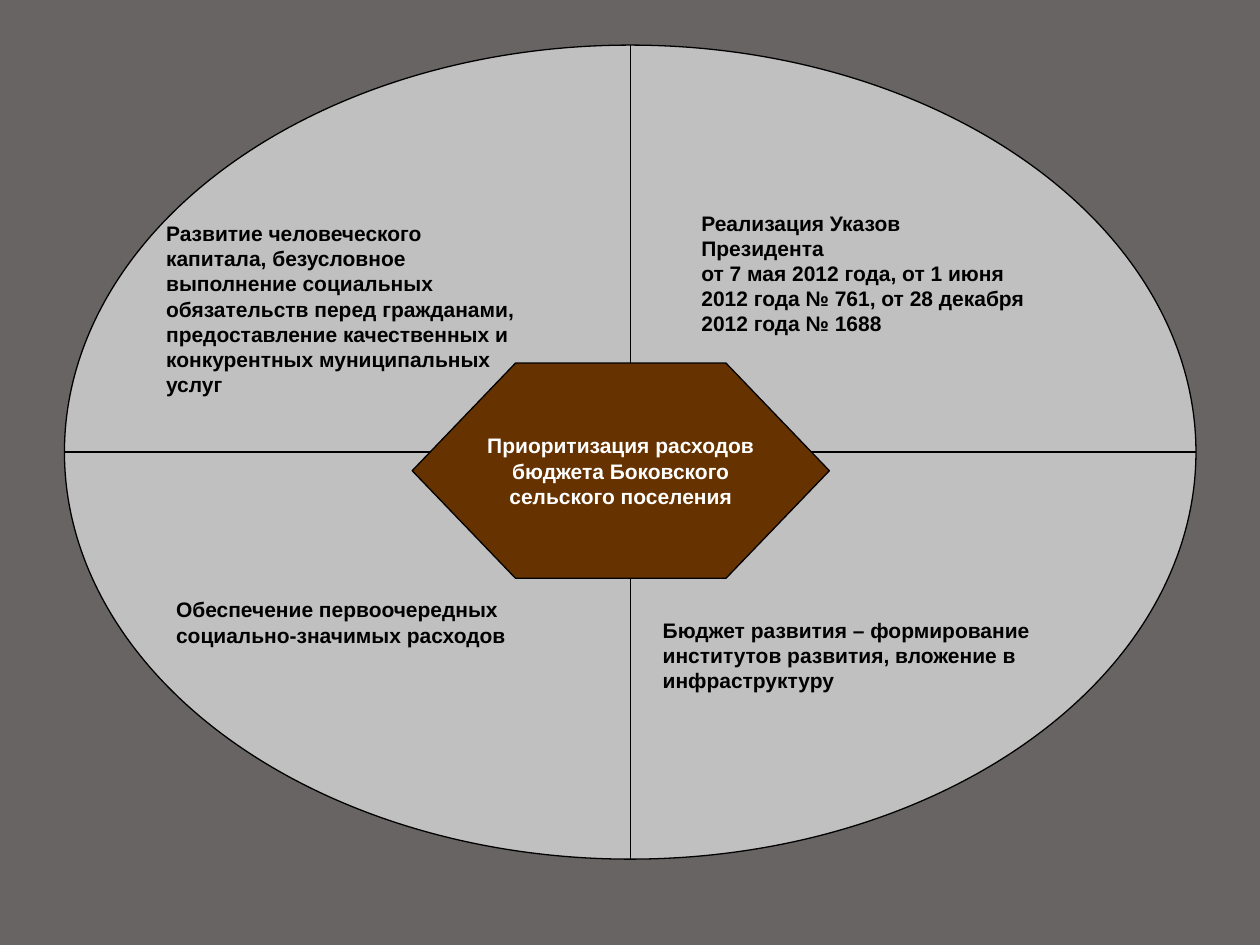
"""Build a slide of budget spending priorities in a four-part ellipse."""
from pptx import Presentation
from pptx.dml.color import RGBColor
from pptx.enum.shapes import MSO_SHAPE
from pptx.enum.text import MSO_ANCHOR, MSO_AUTO_SIZE, PP_ALIGN
from pptx.util import Cm, Pt

WHEEL, HEX = MSO_SHAPE.FLOWCHART_OR, MSO_SHAPE.HEXAGON
MIDDLE, CENTER, LEFT = MSO_ANCHOR.MIDDLE, PP_ALIGN.CENTER, PP_ALIGN.LEFT
GROW = MSO_AUTO_SIZE.SHAPE_TO_FIT_TEXT

BACK, GREY, BROWN = "696464", "C0C0C0", "663300"
BLACK, WHITE = "000000", "FFFFFF"
FONT = {"name": "Arial", "size": Pt(12), "bold": True}

WHEEL_BOX = (1.3, 0.91, 22.81, 16.41)
CORE_BOX = (8.31, 7.32, 8.41, 4.34)
CORE = ["Приоритизация расходов", "бюджета Боковского", "сельского поселения"]
PARTS = [
    ((3.1, 4.32, 8.41, 4.83), [
        "Развитие человеческого",
        "капитала, безусловное",
        "выполнение социальных",
        "обязательств перед гражданами,",
        "предоставление качественных и конкурентных муниципальных",
        "услуг"]),
    ((13.89, 4.11, 7.01, 3.3), [
        "Реализация Указов Президента",
        "от 7 мая 2012 года, от 1 июня",
        "2012 года № 761, от 28 декабря",
        "2012 года № 1688"]),
    ((3.3, 11.91, 8.61, 1.27), [
        "Обеспечение первоочередных",
        "социально-значимых расходов"]),
    ((13.11, 12.32, 9.8, 1.78), [
        "Бюджет развития – формирование",
        "институтов развития, вложение в инфраструктуру"]),
]


def paint(target, color):
    """Give a fill a solid colour."""
    target.solid()
    target.fore_color.rgb = RGBColor.from_string(color)


def write(frame, lines, color, align, **form):
    """Fill a text frame, one paragraph a line."""
    frame.text = "\n".join(lines)
    for key, value in form.items():
        setattr(frame, key, value)
    for para in frame.paragraphs:
        para.alignment = align
        for key, value in FONT.items():
            setattr(para.runs[0].font, key, value)
        paint(para.runs[0].font.fill, color)


def draw(slide, kind, box, color):
    """Add an outlined shape without shadow."""
    shape = slide.shapes.add_shape(kind, *map(Cm, box))
    shape.shadow.inherit = False
    paint(shape.fill, color)
    paint(shape.line.fill, BLACK)
    shape.line.width = Pt(0.75)
    return shape


def main():
    """Build and save the slide."""
    deck = Presentation()
    deck.slide_width, deck.slide_height = Cm(25.4), Cm(19.05)
    slide = deck.slides.add_slide(deck.slide_layouts[6])
    paint(slide.background.fill, BACK)
    draw(slide, WHEEL, WHEEL_BOX, GREY)
    for box, lines in PARTS:
        note = slide.shapes.add_textbox(*map(Cm, box))
        write(note.text_frame, lines, BLACK, LEFT,
              word_wrap=True, auto_size=GROW)
    core = draw(slide, HEX, CORE_BOX, BROWN)
    core.adjustments[0] = 0.48
    write(core.text_frame, CORE, WHITE, CENTER,
          word_wrap=False, vertical_anchor=MIDDLE)
    deck.save("out.pptx")


if __name__ == "__main__":
    main()
